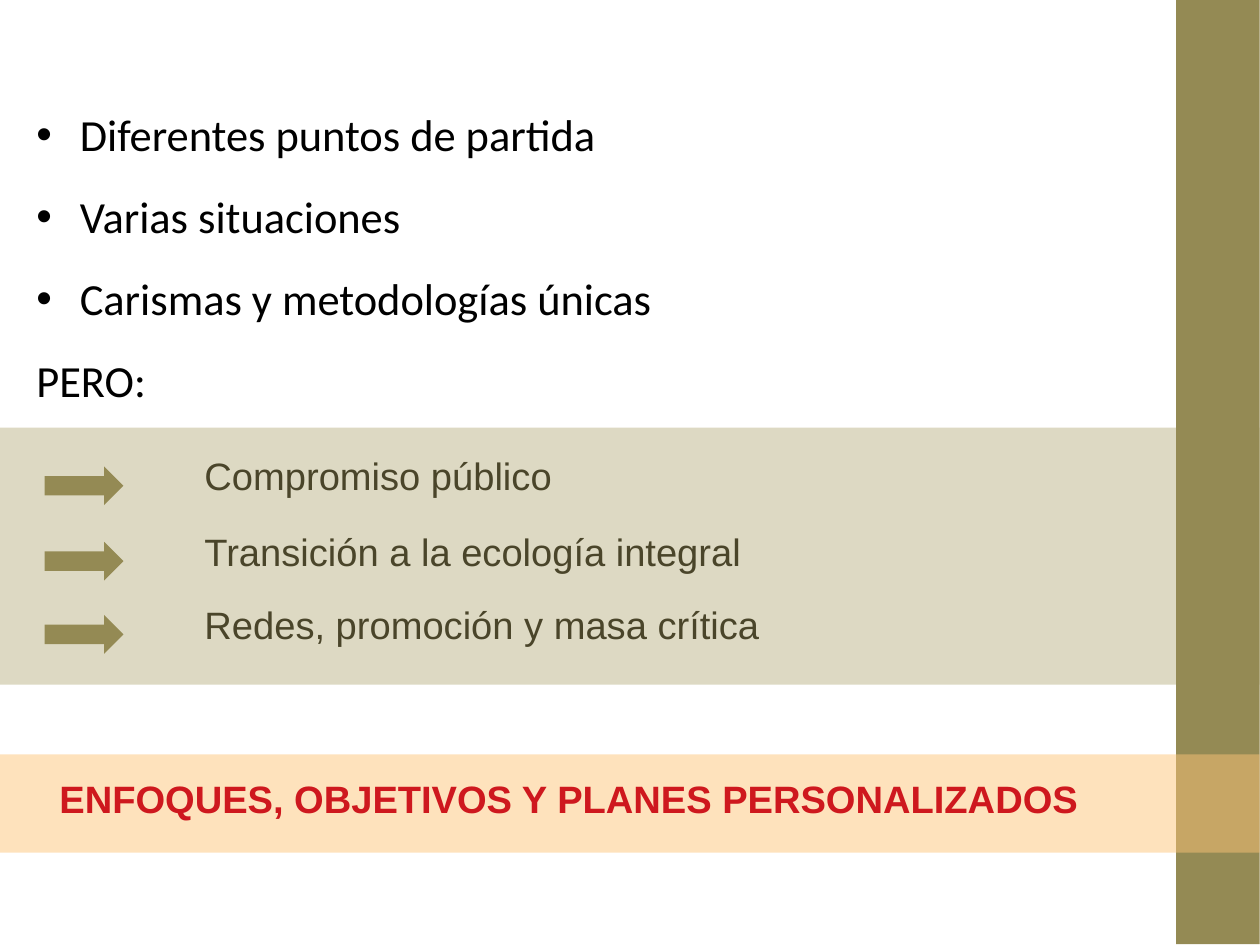
"""Build the slide on differing starting points and shared commitments."""
from dataclasses import dataclass

from lxml import etree
from pptx import Presentation
from pptx import util as u
from pptx.dml.color import RGBColor
from pptx.enum import shapes, text
from pptx.oxml import ns

OLIVE, SAND, ORANGE = "948A54", "DDD9C3", "FDC578"
BROWN, RED, BLACK = "4A452A", "CE181E", "000000"


@dataclass
class Box:
    left: float
    top: float
    width: float
    height: float

    def lengths(self) -> list:
        return [u.Inches(n) for n in (self.left, self.top, self.width, self.height)]


@dataclass
class Commitment:
    wording: str
    top: float


COMMITMENTS = [
    Commitment("Compromiso público", 3.91),
    Commitment("Transición a la ecología integral", 4.57),
    Commitment("Redes, promoción y masa crítica", 5.21),
]
STARTING_POINTS = [
    "Diferentes puntos de partida",
    "Varias situaciones",
    "Carismas y metodologías únicas",
]


def color(value: str) -> RGBColor:
    return RGBColor.from_string(value)


def add_block(slide, kind, box: Box, fill: str, opacity: int = 100) -> None:
    block = slide.shapes.add_shape(kind, *box.lengths())
    block.shadow.inherit = False
    block.fill.solid()
    block.fill.fore_color.rgb = color(fill)
    block.line.fill.background()
    if opacity < 100:
        tint = block.fill._xPr.find(".//" + ns.qn("a:srgbClr"))
        etree.SubElement(tint, ns.qn("a:alpha"), val=str(opacity * 1000))


def add_frame(slide, box: Box):
    frame = slide.shapes.add_textbox(*box.lengths()).text_frame
    frame.word_wrap = True
    return frame


def style(paragraph, face: str, size: int, ink: str, bold: bool = False) -> None:
    paragraph.font.name = face
    paragraph.font.size = u.Pt(size)
    paragraph.font.color.rgb = color(ink)
    paragraph.font.bold = bold


def add_bullet(paragraph) -> None:
    properties = paragraph._p.get_or_add_pPr()
    properties.set("marL", str(u.Inches(0.38)))
    properties.set("indent", str(u.Inches(-0.38)))
    etree.SubElement(properties, ns.qn("a:buFont"), typeface="Arial")
    etree.SubElement(properties, ns.qn("a:buChar"), char="•")


def add_commitment(slide, commitment: Commitment) -> None:
    arrow = Box(0.39, commitment.top + 0.17, 0.69, 0.34)
    add_block(slide, shapes.MSO_SHAPE.RIGHT_ARROW, arrow, OLIVE)
    paragraph = add_frame(slide, Box(1.69, commitment.top, 6.59, 0.5)).paragraphs[0]
    paragraph.text = commitment.wording
    style(paragraph, "Arial", 24, BROWN)


def add_conclusion(slide) -> None:
    frame = add_frame(slide, Box(0.52, 6.42, 10.06, 1.12))
    frame.margin_left = frame.margin_right = 0
    frame.margin_top = frame.margin_bottom = 0
    frame.vertical_anchor = text.MSO_ANCHOR.MIDDLE
    paragraph = frame.paragraphs[0]
    paragraph.text = "ENFOQUES, OBJETIVOS Y PLANES PERSONALIZADOS"
    style(paragraph, "Arial", 24, RED, bold=True)


def add_starting_points(slide) -> None:
    frame = add_frame(slide, Box(0.22, 0.89, 9.89, 3.22))
    frame.text = "\n".join(STARTING_POINTS + ["PERO:"])
    for paragraph in frame.paragraphs:
        paragraph.space_after = u.Pt(18)
        if paragraph.text in STARTING_POINTS:
            add_bullet(paragraph)
        style(paragraph, "Calibri", 28, BLACK)


def main() -> None:
    deck = Presentation()
    deck.slide_width, deck.slide_height = u.Cm(28), u.Cm(21)
    slide = deck.slides.add_slide(deck.slide_layouts[6])
    rectangle = shapes.MSO_SHAPE.RECTANGLE
    add_block(slide, rectangle, Box(-0.09, 3.74, 11.11, 2.25), SAND)
    for commitment in COMMITMENTS:
        add_commitment(slide, commitment)
    add_block(slide, rectangle, Box(10.29, 0, 0.73, 8.26), OLIVE)
    add_block(slide, rectangle, Box(-0.09, 6.6, 11.11, 0.86), ORANGE, opacity=49)
    add_conclusion(slide)
    add_starting_points(slide)
    deck.save("out.pptx")


if __name__ == "__main__":
    main()
